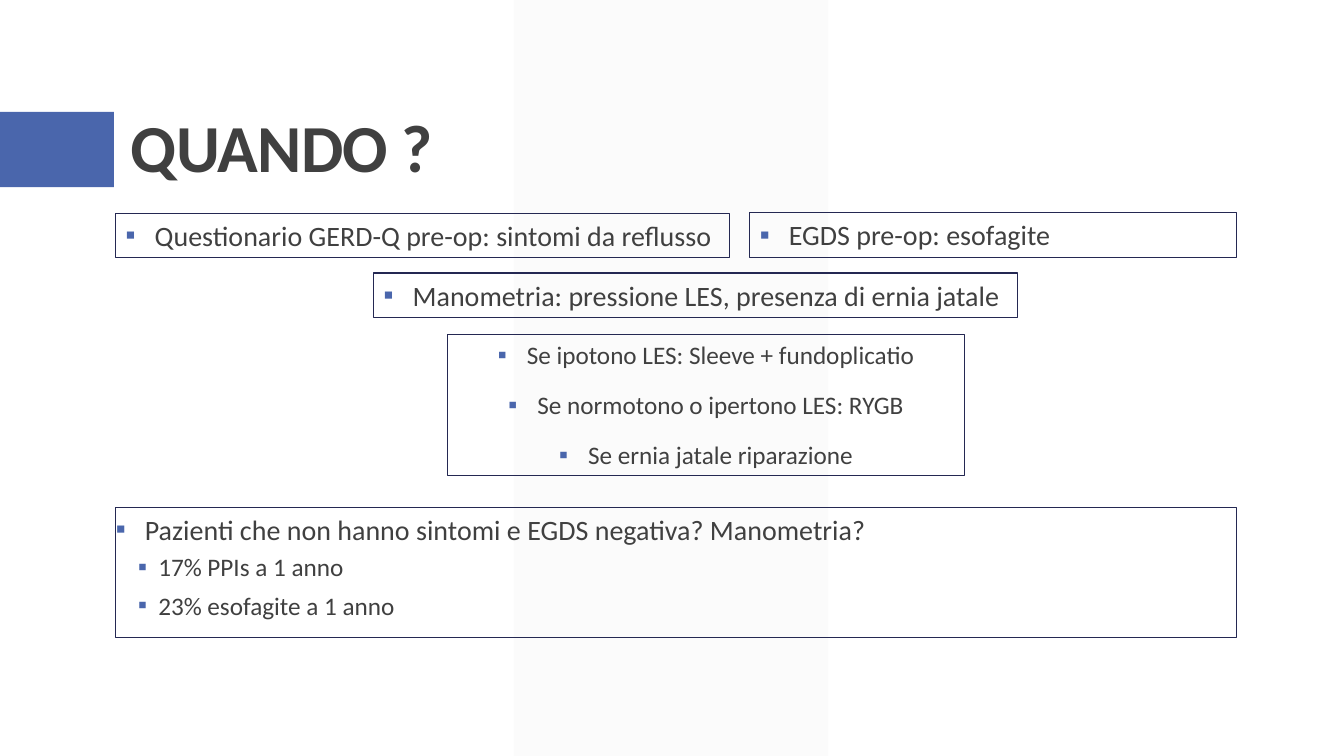
from lxml.etree import SubElement
from pptx import Presentation
from pptx.dml.color import RGBColor
from pptx.enum.shapes import MSO_SHAPE as Shape
from pptx.enum.text import MSO_ANCHOR as Anchor, MSO_AUTO_SIZE as AutoSize, PP_ALIGN as Align
from pptx.oxml.ns import qn
from pptx.util import Cm, Pt

# Content
TITLE = "QUANDO ?"
FONT = "Calibri"
BLUE, NAVY, GREY, PALE = "4A66AC", "242852", "404040", "F2F2F2"

# Paragraph styles: size, left margin, hanging indent (cm), space before, after
STYLES = {
    "main": (20, 0.73, 0.73, 12, 2),
    "choice": (18, 0.73, 0.73, 12, 2),
    "detail": (18, 1.07, 0.51, 2, 4),
}

# Boxes: left, top, width, height (cm), side inset (cm), alignment, lines
BOXES = [
    (2.92, 12.78, 28.24, 3.28, 0, Align.LEFT, [
        ("main", "Pazienti che non hanno sintomi e EGDS negativa? Manometria?"),
        ("detail", "17% PPIs a 1 anno"),
        ("detail", "23% esofagite a 1 anno")]),
    (2.92, 5.38, 15.47, 1.12, 0.25, Align.LEFT, [
        ("main", "Questionario GERD-Q pre-op: sintomi da reflusso")]),
    (18.9, 5.36, 12.27, 1.12, 0.25, Align.LEFT, [
        ("main", "EGDS pre-op: esofagite")]),
    (9.42, 6.88, 16.23, 1.12, 0.25, Align.LEFT, [
        ("main", "Manometria: pressione LES, presenza di ernia jatale")]),
    (11.28, 8.43, 13.03, 3.56, 0.25, Align.CENTER, [
        ("choice", "Se ipotono LES: Sleeve + fundoplicatio"),
        ("choice", "Se normotono o ipertono LES: RYGB"),
        ("choice", "Se ernia jatale riparazione")]),
]


def paint(target, color):
    """Give a fill a solid colour."""
    target.solid()
    target.fore_color.rgb = RGBColor.from_string(color)


def add_block(page, kind, left, top, width, height):
    block = page.shapes.add_shape(kind, Cm(left), Cm(top), Cm(width), Cm(height))
    block.shadow.inherit = False
    return block


def add_bullet(para, margin, hanging):
    props = para._p.get_or_add_pPr()
    props.set("marL", str(Cm(margin)))
    props.set("indent", str(-Cm(hanging)))
    color = SubElement(props, qn("a:buClr"))
    SubElement(color, qn("a:srgbClr"), val=BLUE)
    SubElement(props, qn("a:buFont"), typeface=FONT)
    SubElement(props, qn("a:buChar"), char="▪")


def set_font(para, size, bold=False):
    font = para.font
    font.name, font.size, font.bold = FONT, Pt(size), bold
    paint(font.fill, GREY)


def add_text_box(page, left, top, width, height, inset, align, lines):
    box = add_block(page, Shape.RECTANGLE, left, top, width, height)
    box.fill.background()
    paint(box.line.fill, NAVY)
    box.line.width = Pt(0.75)
    frame = box.text_frame
    frame.word_wrap = True
    frame.auto_size = AutoSize.SHAPE_TO_FIT_TEXT if inset else AutoSize.NONE
    frame.vertical_anchor = Anchor.TOP
    frame.margin_left = frame.margin_right = Cm(inset)
    frame.margin_top = frame.margin_bottom = Cm(0.13)
    for number, (style, text) in enumerate(lines):
        size, margin, hanging, before, after = STYLES[style]
        para = frame.add_paragraph() if number else frame.paragraphs[0]
        para.text = text
        para.alignment = align
        para.space_before, para.space_after = Pt(before), Pt(after)
        add_bullet(para, margin, hanging)
        set_font(para, size)


def add_title(page):
    box = page.shapes.add_textbox(Cm(3.05), Cm(0.79), Cm(27.94), Cm(4.04))
    frame = box.text_frame
    frame.word_wrap = True
    frame.vertical_anchor = Anchor.BOTTOM
    para = frame.paragraphs[0]
    para.text = TITLE
    para.line_spacing = 0.9
    set_font(para, 48, bold=True)
    para.font._element.set("spc", "-50")


def main():
    deck = Presentation()
    deck.slide_width, deck.slide_height = Cm(33.87), Cm(19.05)
    page = deck.slides.add_slide(deck.slide_layouts[6])

    # Backdrop: translucent band and title marker
    band = add_block(page, Shape.PARALLELOGRAM, 12.95, 0, 7.92, 19.05)
    band.adjustments[0] = 0
    marker = add_block(page, Shape.RECTANGLE, 0, 2.82, 2.87, 1.9)
    for block, color in ((band, PALE), (marker, BLUE)):
        paint(block.fill, color)
        block.line.fill.background()
    band_color = band._element.spPr.find(qn("a:solidFill"))[0]
    SubElement(band_color, qn("a:alpha"), val="30000")

    # Title and boxes
    add_title(page)
    for box in BOXES:
        add_text_box(page, *box)

    deck.save("out.pptx")


if __name__ == "__main__":
    main()
